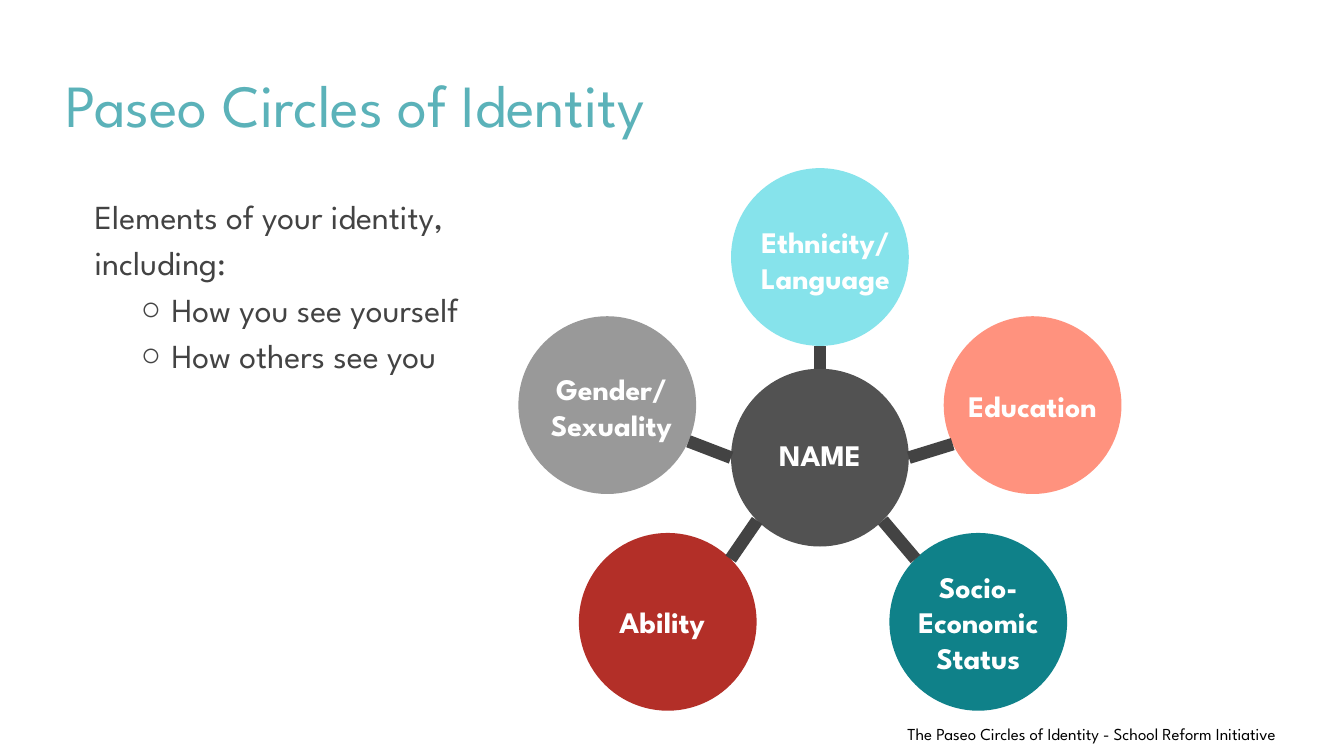
from dataclasses import dataclass
from math import cos, radians, sin

from lxml import etree
from pptx import Presentation
from pptx.dml.color import RGBColor
from pptx.enum.shapes import MSO_CONNECTOR, MSO_SHAPE
from pptx.enum.text import MSO_ANCHOR, MSO_AUTO_SIZE, PP_ALIGN
from pptx.oxml.ns import qn
from pptx.util import Pt

OVAL = MSO_SHAPE.OVAL
STRAIGHT = MSO_CONNECTOR.STRAIGHT
TOP, MIDDLE, BOTTOM = MSO_ANCHOR.TOP, MSO_ANCHOR.MIDDLE, MSO_ANCHOR.BOTTOM
LEFT, CENTER = PP_ALIGN.LEFT, PP_ALIGN.CENTER


@dataclass(frozen=True)
class Theme:
    font: str = "League Spartan"
    title: str = "5BB2B9"
    body: str = "434343"
    label: str = "FFFFFF"
    credit: str = "000000"
    spoke: str = "434343"
    title_size: float = 42.7
    body_size: float = 24
    label_size: float = 21.3
    credit_size: float = 12


THEME = Theme()

TITLE = "Paseo Circles of Identity"
INTRO = "Elements of your identity, including:"
VIEWS = ["How you see yourself", "How others see you"]
CREDIT = "The Paseo Circles of Identity - School Reform Initiative"

# Label lines, colour, circle centre, label width, label shift from the centre
CIRCLES = [
    (["Ethnicity/ Language"], "86E3EB", (585.7, 183.6), 149, (4, 2)),
    (["NAME"], "525252", (585.7, 326.9), 127, (0, -2)),
    (["Education"], "FF927E", (737.6, 289.4), 152, (0, 0)),
    (["Ability"], "B32F28", (477, 444.2), 135, (-4, 0)),
    (["Socio-", "Economic Status"], "0F8189", (698.8, 444.2), 127, (0, 0)),
    (["Gender/", "Sexuality"], "999999", (433.8, 289.4), 127, (3, 1)),
]
HUB = (585.7, 326.9)
# Outer circle centre, angle on the hub's rim, angle on the outer rim (clockwise from right)
SPOKES = [
    ((585.7, 183.6), 270, 90),
    ((737.6, 289.4), 0, 154),
    ((698.8, 444.2), 45, 225),
    ((477, 444.2), 135, 315),
    ((433.8, 289.4), 180, 24),
]
DIAMETER = 127
LABEL_HEIGHT = 28
SPOKE_WIDTH = 9


def place(shape, left, top, width, height):
    shape.left, shape.top = Pt(left), Pt(top)
    shape.width, shape.height = Pt(width), Pt(height)


def set_up_frame(frame, anchor, inset):
    frame.word_wrap = True
    frame.auto_size = MSO_AUTO_SIZE.NONE
    frame.vertical_anchor = anchor
    frame.margin_left = frame.margin_right = Pt(inset)
    frame.margin_top = frame.margin_bottom = Pt(inset)


def write(frame, lines, size, color, align=LEFT, bold=False):
    frame.text = "\n".join(lines)
    for paragraph in frame.paragraphs:
        paragraph.alignment = align
        paragraph.font.name = THEME.font
        paragraph.font.size = Pt(size)
        paragraph.font.bold = bold
        paragraph.font.color.rgb = RGBColor.from_string(color)


def set_bullet(paragraph, symbol, margin, indent):
    """Give the paragraph a bullet, or none when symbol is empty."""
    properties = paragraph._p.get_or_add_pPr()
    properties.set("marL", str(Pt(margin)))
    properties.set("indent", str(Pt(indent)))
    if symbol:
        bullet = etree.Element(qn("a:buChar"), char=symbol)
    else:
        bullet = etree.Element(qn("a:buNone"))
    properties.insert_element_before(
        bullet, "a:tabLst", "a:defRPr", "a:extLst")


def rim(center, angle):
    """Return the point on a circle's rim at the given angle."""
    x, y = center
    radius = DIAMETER / 2
    return x + radius * cos(radians(angle)), y + radius * sin(radians(angle))


def add_circle(shapes, color, center):
    x, y = center
    circle = shapes.add_shape(OVAL, Pt(x - DIAMETER / 2), Pt(y - DIAMETER / 2),
                              Pt(DIAMETER), Pt(DIAMETER))
    circle.shadow.inherit = False
    circle.fill.solid()
    circle.fill.fore_color.rgb = RGBColor.from_string(color)
    circle.line.fill.background()


def add_label(shapes, lines, center, width, shift):
    x, y = center[0] + shift[0], center[1] + shift[1]
    label = shapes.add_textbox(Pt(x - width / 2), Pt(y - LABEL_HEIGHT / 2),
                               Pt(width), Pt(LABEL_HEIGHT))
    set_up_frame(label.text_frame, MIDDLE, 9.4)
    write(label.text_frame, lines, THEME.label_size, THEME.label, CENTER, True)


def add_spoke(shapes, outer, hub_angle, outer_angle):
    ends = rim(HUB, hub_angle) + rim(outer, outer_angle)
    spoke = shapes.add_connector(STRAIGHT, *[Pt(value) for value in ends])
    spoke.line.width = Pt(SPOKE_WIDTH)
    spoke.line.color.rgb = RGBColor.from_string(THEME.spoke)
    etree.SubElement(spoke._element.spPr, qn("a:effectLst"))


def fill_body(body):
    place(body, 64, 132, 305, 305)
    frame = body.text_frame
    set_up_frame(frame, TOP, 3.6)
    frame.text = "\n".join([INTRO, *VIEWS])
    intro, *views = frame.paragraphs
    set_bullet(intro, "", 0, 0)
    for view in views:
        view.level = 1
        set_bullet(view, "○", 55, -22)
    for paragraph in frame.paragraphs:
        paragraph.alignment = LEFT
        paragraph.line_spacing = 1.15
        paragraph.space_before = Pt(0)
        paragraph.font.name = THEME.font
        paragraph.font.size = Pt(THEME.body_size)
        paragraph.font.color.rgb = RGBColor.from_string(THEME.body)


def main():
    deck = Presentation()
    deck.slide_width, deck.slide_height = Pt(960), Pt(540)
    slide = deck.slides.add_slide(deck.slide_layouts[1])
    shapes = slide.shapes

    title = shapes.title
    place(title, 43, 28, 790, 75)
    set_up_frame(title.text_frame, BOTTOM, 3.6)
    write(title.text_frame, [TITLE], THEME.title_size, THEME.title)
    fill_body(slide.placeholders[1])

    for lines, color, center, width, shift in CIRCLES:
        add_circle(shapes, color, center)
        add_label(shapes, lines, center, width, shift)
    for outer, hub_angle, outer_angle in SPOKES:
        add_spoke(shapes, outer, hub_angle, outer_angle)

    credit = shapes.add_textbox(Pt(644.5), Pt(513.5), Pt(310), Pt(22))
    set_up_frame(credit.text_frame, TOP, 3.6)
    write(credit.text_frame, [CREDIT], THEME.credit_size, THEME.credit)

    deck.save("out.pptx")


if __name__ == "__main__":
    main()
